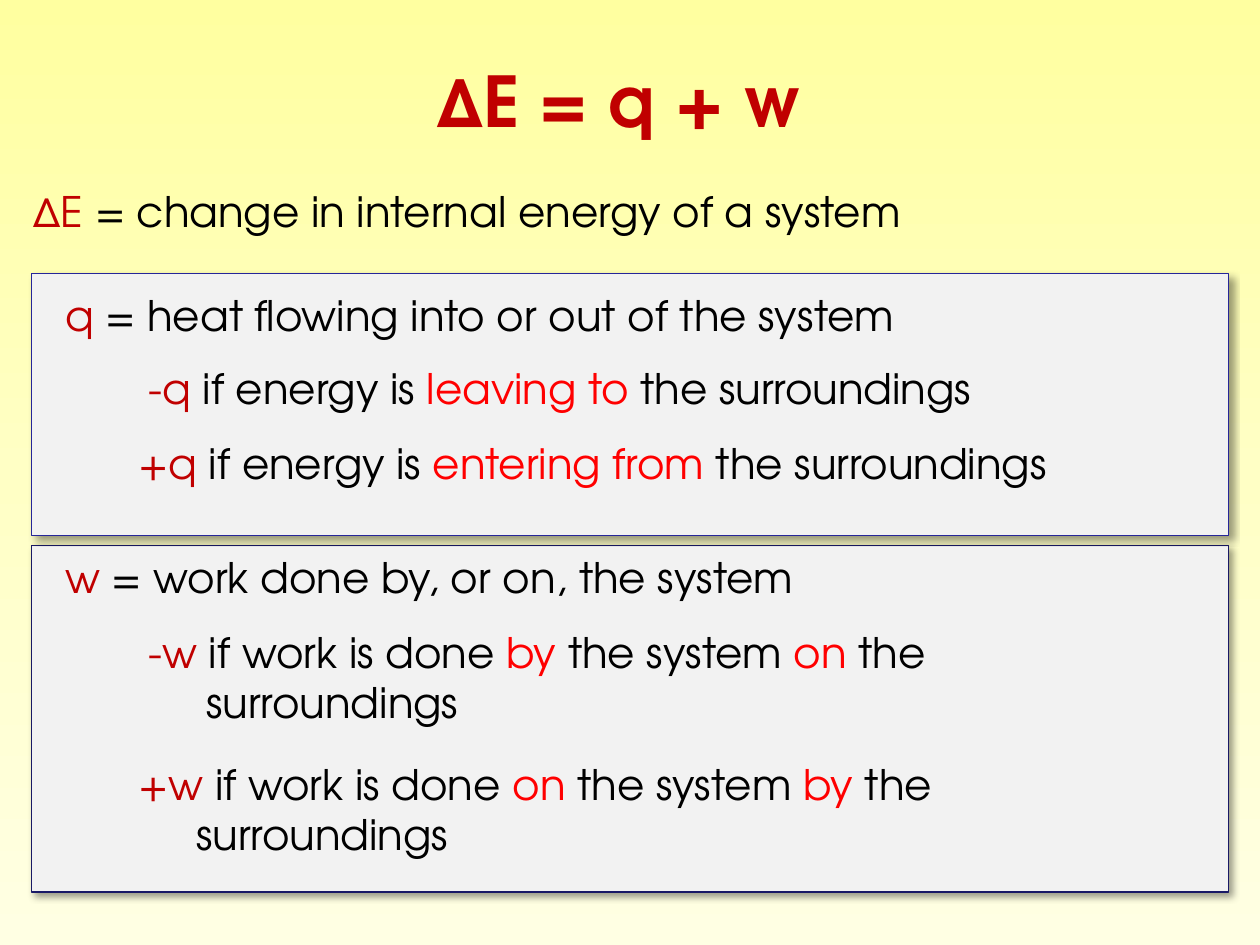
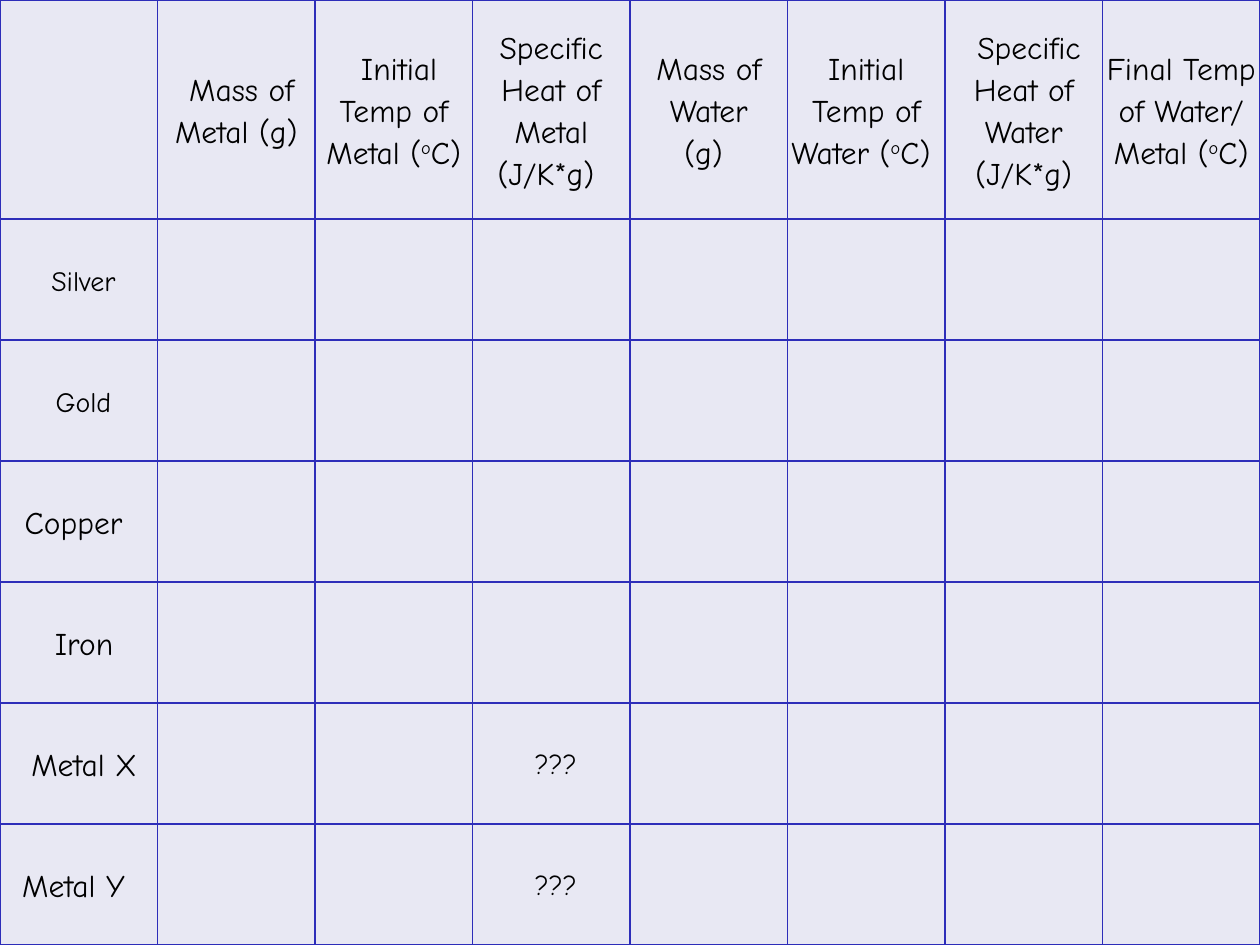
"""Build two chemistry slides: internal energy and a calorimetry data table."""
import copy
import dataclasses
import lxml.etree
import pptx
import pptx.dml.color
import pptx.enum.shapes
import pptx.enum.text
import pptx.oxml
import pptx.oxml.ns
import pptx.util

Inches = pptx.util.Inches
Pt = pptx.util.Pt
ALIGN = pptx.enum.text.PP_ALIGN
MIDDLE = pptx.enum.text.MSO_ANCHOR.MIDDLE


@dataclasses.dataclass(frozen=True)
class Theme:
    """Colours, fonts and type sizes."""
    sky: tuple = ("FFFFA0", "FFFFC5", "FFFFE3")
    backdrop: str = "3333CC"
    symbol: str = "C00000"
    accent: str = "FF0000"
    ink: str = "000000"
    panel: str = "F2F2F2"
    heat_edge: str = "262699"
    work_edge: str = "191966"
    cell: str = "E8E8F3"
    grid: str = "2D2DB9"
    lesson_font: str = "TeX Gyre Adventor"
    table_font: str = "Comic Neue"
    title_size: int = 40
    body_size: int = 24
    header_size: int = 18
    small_size: int = 16


THEME = Theme()
PANEL_LEFT, PANEL_WIDTH = 0.25, 9.5
ROW_HEIGHTS = [1.74] + [0.96] * 6
COLUMN_WIDTH = 1.25

HEAT_LINES = [
    (0.17, 0.08, 6.84, False, [[("q ", "symbol"), ("= heat flowing into or out of the system", "ink")]]),
    (0.83, 0.66, 7.83, True, [[("-q ", "symbol"), ("if energy is ", "ink"),
                               ("leaving to ", "accent"), ("the surroundings", "ink")]]),
    (0.75, 1.25, 8.83, True, [[("+q ", "symbol"), ("if energy is ", "ink"),
                               ("entering from ", "accent"), ("the surroundings", "ink")]]),
]


def work_rule(sign, first, second):
    """Return the two paragraphs that explain one sign of work."""
    return [[(f"{sign}w ", "symbol"), ("if work is done ", "ink"), (f"{first} ", "accent"),
             ("the system ", "ink"), (f"{second} ", "accent"), ("the", "ink")],
            [("surroundings", "ink")]]


WORK_LINES = [
    (0.17, 0, 6.05, False, [[("w ", "symbol"), ("= work done by, or on, the system", "ink")]]),
    (0.83, 0.59, 8.08, True, work_rule("-", "by", "on")),
    (0.75, 1.64, 8.08, True, work_rule("+", "on", "by")),
]

HEADERS = ["", " Mass of Metal (g)", " Initial Temp of Metal (^o^C)", "Specific Heat of Metal (J/K*g) ",
           "Mass of Water\n(g) ", "Initial Temp of Water (^o^C) ", " Specific Heat of Water (J/K*g)",
           "Final Temp of Water/ Metal (^o^C)"]
METALS = [(" Silver", THEME.small_size), (" Gold", THEME.small_size), ("Copper ", THEME.header_size),
          (" Iron", THEME.header_size), (" Metal X", THEME.header_size), ("Metal Y ", THEME.header_size)]
UNKNOWN, UNKNOWN_ROWS, SPECIFIC_HEAT = " ???", (5, 6), 3


def rgb(value):
    """Turn a hex string into a colour."""
    return pptx.dml.color.RGBColor.from_string(value)


def add_run(paragraph, words, font, size, colour, bold=False):
    """Append one formatted run."""
    run = paragraph.add_run()
    run.text = words
    run.font.name = font
    run.font.size = Pt(size)
    run.font.bold = bold
    run.font.color.rgb = rgb(colour)
    return run


def place_text(slide, left, top, width, wraps, paragraphs):
    """Place lesson text, indenting every paragraph after the first."""
    frame = slide.shapes.add_textbox(Inches(left), Inches(top), Inches(width),
                                     Inches(0.5 if len(paragraphs) == 1 else 0.91)).text_frame
    frame.word_wrap = wraps
    for index, pieces in enumerate(paragraphs):
        paragraph = frame.paragraphs[0]
        if index:
            paragraph = frame.add_paragraph()
            paragraph._p.get_or_add_pPr().set("marL", str(Inches(0.46)))
        for words, role in pieces:
            add_run(paragraph, words, THEME.lesson_font, THEME.body_size, getattr(THEME, role))


def add_soft_shadow(shape):
    """Give a shape a soft shadow to the lower right."""
    shape.shadow.inherit = False
    effects = shape._element.spPr.find(pptx.oxml.ns.qn("a:effectLst"))
    effects.append(pptx.oxml.parse_xml(
        f'<a:outerShdw {pptx.oxml.ns.nsdecls("a")} blurRad="{Pt(4)}" dist="{Pt(3)}" dir="2700000" '
        'algn="tl" rotWithShape="0"><a:srgbClr val="000000"><a:alpha val="40000"/></a:srgbClr></a:outerShdw>'))


def add_panel(slide, top, height, edge, lines):
    """Draw a definition panel and its lines of text."""
    panel = slide.shapes.add_shape(pptx.enum.shapes.MSO_SHAPE.RECTANGLE, Inches(PANEL_LEFT), Inches(top),
                                   Inches(PANEL_WIDTH), Inches(height))
    panel.fill.solid()
    panel.fill.fore_color.rgb = rgb(THEME.panel)
    panel.line.color.rgb = rgb(edge)
    panel.line.width = Pt(0.75)
    add_soft_shadow(panel)
    for dx, dy, width, wraps, paragraphs in lines:
        place_text(slide, PANEL_LEFT + dx, top + dy, width, wraps, paragraphs)


def paint_sky(slide):
    """Fill the background with the three-stop vertical gradient."""
    fill = slide.background.fill
    fill.gradient()
    fill.gradient_angle = 270
    first = slide.element.xpath(".//a:gs")[0]
    first.addnext(copy.deepcopy(first))
    for index, (stop, colour) in enumerate(zip(fill.gradient_stops, THEME.sky)):
        stop.color.rgb = rgb(colour)
        stop.position = index / 2


def build_energy_slide(deck):
    """Build the internal energy slide."""
    slide = deck.slides.add_slide(deck.slide_layouts[5])
    paint_sky(slide)
    title = slide.shapes.title
    title.left, title.top, title.width, title.height = map(Inches, (2.75, 0.33, 4.33, 0.92))
    title.text_frame.vertical_anchor = MIDDLE
    heading = title.text_frame.paragraphs[0]
    heading.alignment = ALIGN.CENTER
    add_run(heading, "ΔE = q + w", THEME.lesson_font, THEME.title_size, THEME.symbol, True)
    place_text(slide, 0.17, 1.42, 7.12, False,
               [[("ΔE ", "symbol"), ("= change in internal energy of a system", "ink")]])
    add_panel(slide, 4.33, 2.75, THEME.work_edge, WORK_LINES)
    add_panel(slide, 2.17, 2.08, THEME.heat_edge, HEAT_LINES)


def style_cell(cell):
    """Set the fill, insets and four borders of a cell."""
    cell.fill.solid()
    cell.fill.fore_color.rgb = rgb(THEME.cell)
    cell.vertical_anchor = MIDDLE
    cell.margin_left = cell.margin_right = cell.margin_top = cell.margin_bottom = Inches(0.02)
    properties = cell._tc.get_or_add_tcPr()
    for index, side in enumerate(("lnL", "lnR", "lnT", "lnB")):
        properties.insert(index, pptx.oxml.parse_xml(
            f'<a:{side} {pptx.oxml.ns.nsdecls("a")} w="{Pt(1)}"><a:solidFill>'
            f'<a:srgbClr val="{THEME.grid}"/></a:solidFill></a:{side}>'))


def write_cell(cell, words, size):
    """Write centred cell text, raising parts between carets."""
    paragraph = cell.text_frame.paragraphs[0]
    paragraph.alignment = ALIGN.CENTER
    paragraph.line_spacing = 1.15
    for line_index, line in enumerate(words.split("\n")):
        if line_index:
            paragraph.add_line_break()
        for index, piece in enumerate(line.split("^")):
            run = add_run(paragraph, piece, THEME.table_font, size, THEME.ink)
            if index % 2:
                run.font._element.set("baseline", "30000")


def build_data_slide(deck):
    """Build the calorimetry data table slide."""
    slide = deck.slides.add_slide(deck.slide_layouts[6])
    slide.background.fill.solid()
    slide.background.fill.fore_color.rgb = rgb(THEME.backdrop)
    table = slide.shapes.add_table(len(ROW_HEIGHTS), len(HEADERS), 0, 0, Inches(10), Inches(7.5)).table
    for column in table.columns:
        column.width = Inches(COLUMN_WIDTH)
    for row, height in zip(table.rows, ROW_HEIGHTS):
        row.height = Inches(height)
    for cell in table.iter_cells():
        style_cell(cell)
    for column, words in enumerate(HEADERS):
        if words:
            write_cell(table.cell(0, column), words, THEME.header_size)
    for row, (metal, size) in enumerate(METALS, 1):
        write_cell(table.cell(row, 0), metal, size)
    for row in UNKNOWN_ROWS:
        write_cell(table.cell(row, SPECIFIC_HEAT), UNKNOWN, THEME.small_size)


def main():
    """Build and save the deck."""
    deck = pptx.Presentation()
    deck.slide_width, deck.slide_height = Inches(10), Inches(7.5)
    build_energy_slide(deck)
    build_data_slide(deck)
    deck.save("out.pptx")


if __name__ == "__main__":
    main()
